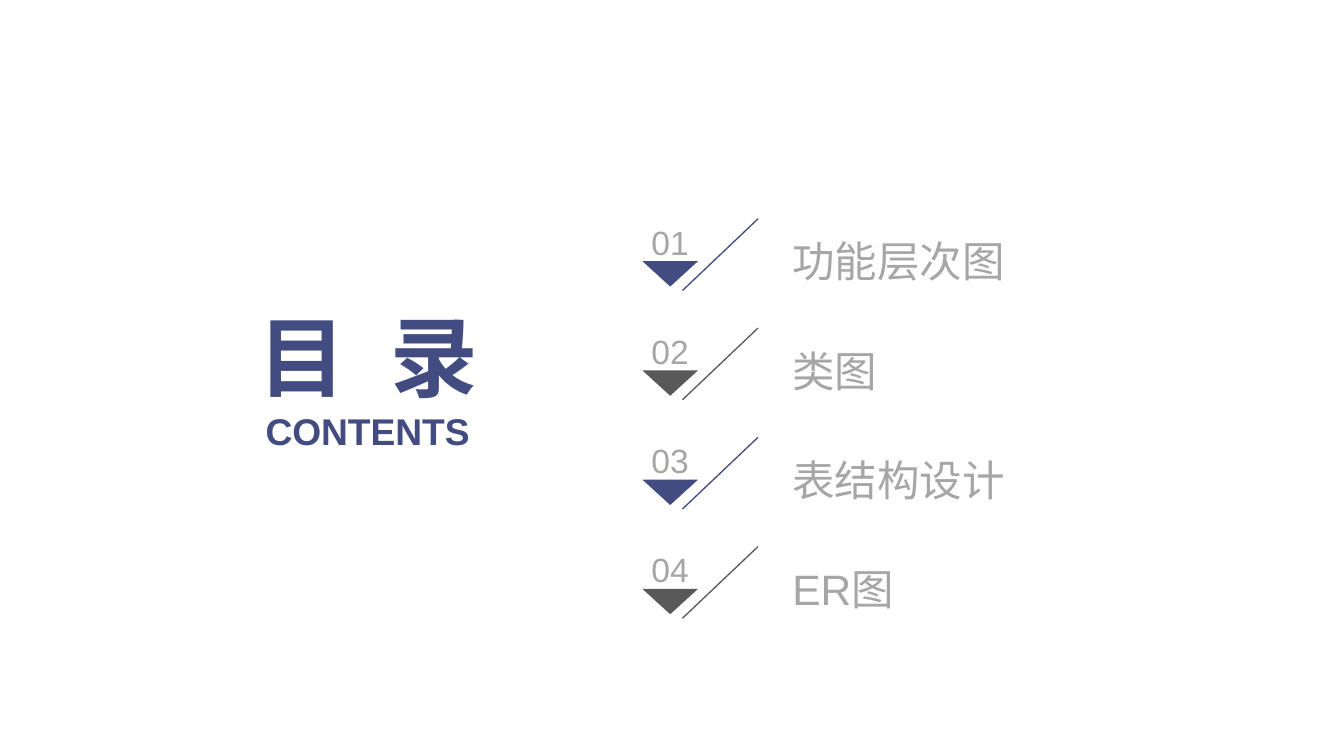
import pptx
import pptx.dml.color
import pptx.enum.shapes
import pptx.enum.text
import pptx.oxml
import pptx.oxml.ns
import pptx.util

NAVY = pptx.dml.color.RGBColor(0x42, 0x4C, 0x80)
CHARCOAL = pptx.dml.color.RGBColor(0x59, 0x59, 0x59)
GREY = pptx.dml.color.RGBColor(0xA6, 0xA6, 0xA6)

# The grid has 100 columns and 100 rows
SLIDE_WIDTH = pptx.util.Inches(14.06)
SLIDE_HEIGHT = pptx.util.Inches(7.91)
FIRST_ROW = 28.95
ROW_PITCH = 14.45

ANCHOR = pptx.enum.text.MSO_ANCHOR
ALIGN = pptx.enum.text.PP_ALIGN

HEADING = {"size": pptx.util.Pt(66), "bold": True, "color": NAVY}
SUBHEADING = {"size": pptx.util.Pt(28), "bold": True, "color": NAVY}
NUMBER = {"size": pptx.util.Pt(25.3), "color": GREY}
TOPIC = {"size": pptx.util.Pt(32), "color": GREY}

TOPICS = ["功能层次图", "类图", "表结构设计", "ER图"]


def columns(count):
    return round(SLIDE_WIDTH * count / 100)


def rows(count):
    return round(SLIDE_HEIGHT * count / 100)


def add_run(paragraph, text, style):
    run = paragraph.add_run()
    run.text = text
    run.font.name = "Arial"
    for name, value in style.items():
        if name == "color":
            run.font.color.rgb = value
        else:
            setattr(run.font, name, value)
    return run


def add_text(shapes, left, top, width, height, text, style,
             anchor=ANCHOR.MIDDLE, align=ALIGN.CENTER):
    box = shapes.add_textbox(columns(left), rows(top), columns(width), rows(height))
    frame_format = {
        "word_wrap": True,
        "auto_size": pptx.enum.text.MSO_AUTO_SIZE.SHAPE_TO_FIT_TEXT,
        "vertical_anchor": anchor,
        "margin_left": 0,
        "margin_right": 0,
        "margin_top": 0,
        "margin_bottom": 0,
    }
    for name, value in frame_format.items():
        setattr(box.text_frame, name, value)
    paragraph = box.text_frame.paragraphs[0]
    paragraph.alignment = align
    return paragraph, add_run(paragraph, text, style)


def add_slash(shapes, top, color):
    line = shapes.add_connector(
        pptx.enum.shapes.MSO_CONNECTOR.STRAIGHT,
        columns(56.4), rows(top), columns(50.78), rows(top + 9.48))
    line.line.color.rgb = color
    line.line.width = pptx.util.Pt(1)
    properties = line._element.spPr
    properties.append(pptx.oxml.parse_xml(
        "<a:effectLst %s/>" % pptx.oxml.ns.nsdecls("a")))


def add_triangle(shapes, top, color):
    left, width, height = 47.8, 4.13, 3.35
    builder = shapes.build_freeform(columns(left), rows(top))
    builder.add_line_segments([
        (columns(left + width), rows(top)),
        (columns(left + width / 2), rows(top + height)),
    ], close=True)
    triangle = builder.convert_to_shape()
    triangle.shadow.inherit = False
    triangle.fill.solid()
    triangle.fill.fore_color.rgb = color
    triangle.line.fill.background()


def add_entry(slide, index, topic):
    top = FIRST_ROW + index * ROW_PITCH
    color = (NAVY, CHARCOAL)[index % 2]
    add_text(slide.shapes, 58.96, top + 2.15, 28.3, 6.83, topic, TOPIC,
             align=ALIGN.LEFT)
    marker = slide.shapes.add_group_shape()
    add_slash(marker.shapes, top, color)
    add_triangle(marker.shapes, top + 5.6, color)
    add_text(marker.shapes, 47.65, top + 0.25, 4.41, 5.44,
             f"{index + 1:02d}", NUMBER, anchor=ANCHOR.BOTTOM)


def add_title(slide):
    # Letter spacing widens the gap between the two characters
    paragraph, first = add_text(slide.shapes, 16.22, 39.95, 22.33, 14.03, "目 ", HEADING)
    first._r.get_or_add_rPr().set("spc", "900")
    add_run(paragraph, "录", HEADING)
    add_text(slide.shapes, 16.29, 53.98, 22.12, 5.94, "CONTENTS", SUBHEADING,
             anchor=ANCHOR.TOP)


def main():
    presentation = pptx.Presentation()
    presentation.slide_width = SLIDE_WIDTH
    presentation.slide_height = SLIDE_HEIGHT
    slide = presentation.slides.add_slide(presentation.slide_layouts[6])

    # Numbered topics
    for index, topic in enumerate(TOPICS):
        add_entry(slide, index, topic)

    # Title block
    add_title(slide)
    presentation.save("out.pptx")


if __name__ == "__main__":
    main()
